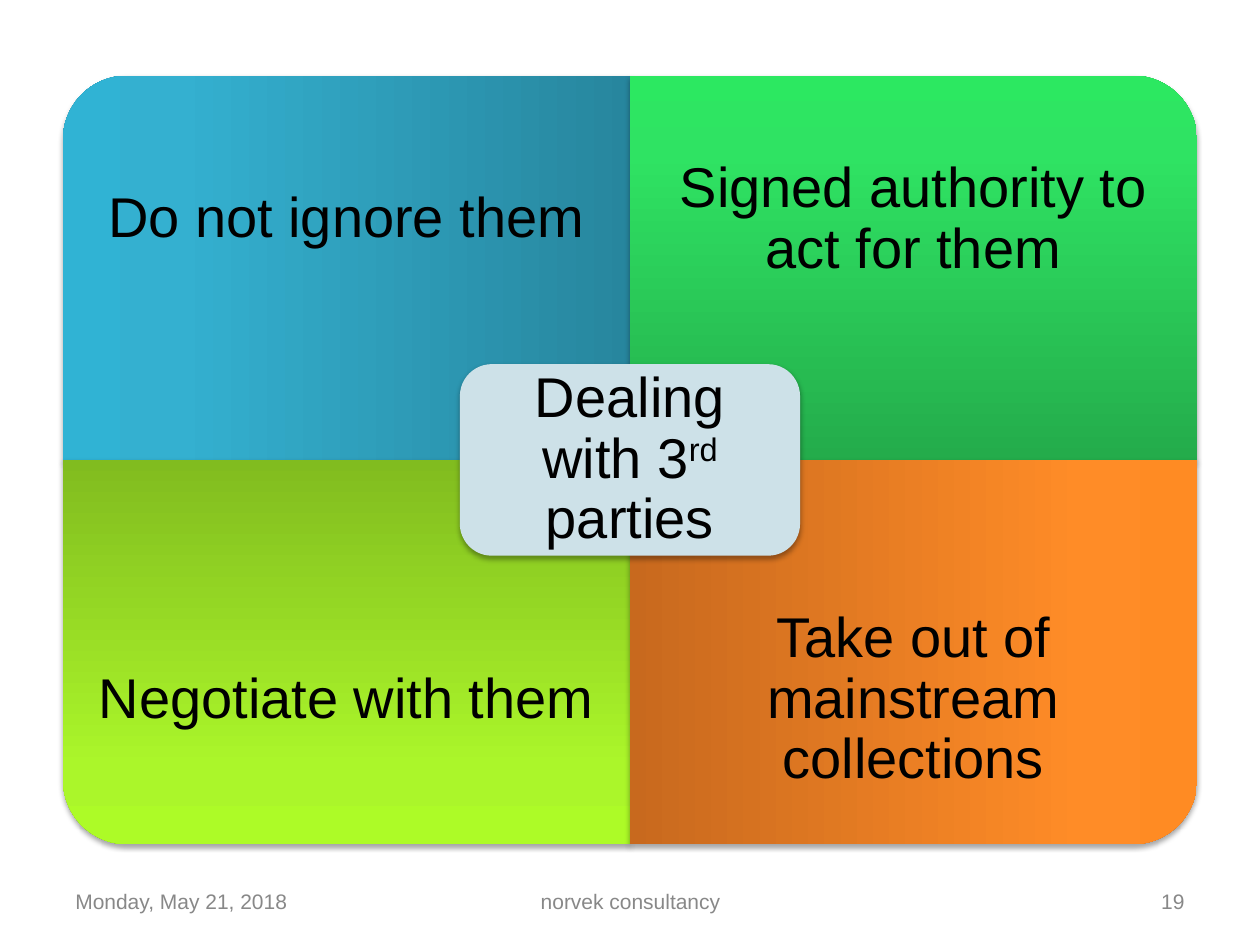
import pptx
import pptx.util
import pptx.dml.color
import pptx.enum.shapes
import pptx.enum.text
import pptx.oxml
import pptx.oxml.ns
from lxml import etree

Inches = pptx.util.Inches
Pt = pptx.util.Pt
qn = pptx.oxml.ns.qn
MSO_SHAPE = pptx.enum.shapes.MSO_SHAPE
ALIGN = pptx.enum.text.PP_ALIGN

COLOURS = {"text": "000000", "footer": "888888", "centre": "CDE1E8", "shadow": "000000"}
QUADRANTS = [
    ("Do not ignore them", 0, 0, 270, ("27869E", "34B0D0", "30B3D4")),
    ("Signed authority to act for them", 1, 0, 0, ("24AC4B", "2FE363", "2CE861")),
    ("Negotiate with them", 0, 1, 180, ("81BC1F", "ABF62A", "ADFB27")),
    ("Take out of mainstream collections", 1, 1, 90, ("C8691E", "FF8C27", "FF8B23")),
]
GRADIENT_STOPS = (0, 80, 100)
CENTRE_RUNS = [("Dealing with 3", False), ("rd", True), (" parties", False)]
FOOTERS = [
    ("Monday, May 21, 2018", 0.5, 2.33, ALIGN.LEFT),
    ("norvek consultancy", 3.42, 3.17, ALIGN.CENTER),
    ("19", 7.17, 2.33, ALIGN.RIGHT),
]
LEFT, TOP, CELL_WIDTH, CELL_HEIGHT = 0.5, 0.6, 4.5, 3.05
LABEL_HEIGHT = CELL_HEIGHT * 0.75
CENTRE_WIDTH, CENTRE_HEIGHT, CENTRE_PADDING = 2.7, 1.52, 0.07


def colour(name):
    return pptx.dml.color.RGBColor.from_string(COLOURS[name])


def add_colour(parent, value):
    return etree.SubElement(parent, qn("a:srgbClr"), val=value)


def add_text(shapes, box, runs, size, colour_name, align, margins, spacing=None):
    text_box = shapes.add_textbox(*map(Inches, box))
    frame = text_box.text_frame
    frame.word_wrap = True
    frame.vertical_anchor = pptx.enum.text.MSO_ANCHOR.MIDDLE
    frame.margin_left = frame.margin_right = Inches(margins[0])
    frame.margin_top = frame.margin_bottom = Inches(margins[1])
    paragraph = frame.paragraphs[0]
    paragraph.alignment = align
    paragraph.line_spacing = spacing
    paragraph.font.name = "Arial"
    paragraph.font.size = Pt(size)
    paragraph.font.color.rgb = colour(colour_name)
    for text, raised in runs:
        run = paragraph.add_run()
        run.text = text
        if raised:
            run._r.get_or_add_rPr().set("baseline", "30000")


def add_panel(shapes, preset, box):
    shape = shapes.add_shape(preset, *map(Inches, box))
    shape.line.fill.background()
    shape.shadow.inherit = False
    effects = shape._element.spPr.find(qn("a:effectLst"))
    shadow = etree.SubElement(
        effects, qn("a:outerShdw"), blurRad=str(Pt(3.1)), dist=str(Pt(1.8)),
        dir="5400000", rotWithShape="0")
    etree.SubElement(add_colour(shadow, COLOURS["shadow"]), qn("a:alpha"), val="35000")
    return shape


def fill_gradient(shape, values):
    shape.fill.gradient()
    shape.fill.gradient_angle = 90
    stops = shape._element.spPr.find(qn("a:gradFill")).find(qn("a:gsLst"))
    for stop in list(stops):
        stops.remove(stop)
    for position, value in zip(GRADIENT_STOPS, values):
        add_colour(etree.SubElement(stops, qn("a:gs"), pos=str(position * 1000)), value)


def add_quadrant(shapes, text, column, row, rotation, values):
    left = LEFT + column * CELL_WIDTH
    top = TOP + row * CELL_HEIGHT
    width, height = CELL_WIDTH, CELL_HEIGHT
    if rotation % 180:
        width, height = height, width
    box = (left + (CELL_WIDTH - width) / 2, top + (CELL_HEIGHT - height) / 2, width, height)
    shape = add_panel(shapes, MSO_SHAPE.ROUND_1_RECTANGLE, box)
    shape.rotation = rotation
    fill_gradient(shape, values)
    label_top = top + row * (CELL_HEIGHT - LABEL_HEIGHT)
    add_text(shapes, (left, label_top, CELL_WIDTH, LABEL_HEIGHT), [(text, False)],
             32, "text", ALIGN.CENTER, (0.25, 0.25), 0.9)


def add_centre(shapes):
    left = LEFT + CELL_WIDTH - CENTRE_WIDTH / 2
    top = TOP + CELL_HEIGHT - CENTRE_HEIGHT / 2
    shape = add_panel(shapes, MSO_SHAPE.ROUNDED_RECTANGLE,
                      (left, top, CENTRE_WIDTH, CENTRE_HEIGHT))
    shape.fill.solid()
    shape.fill.fore_color.rgb = colour("centre")
    box = (left + CENTRE_PADDING, top + CENTRE_PADDING,
           CENTRE_WIDTH - 2 * CENTRE_PADDING, CENTRE_HEIGHT - 2 * CENTRE_PADDING)
    add_text(shapes, box, CENTRE_RUNS, 32, "text", ALIGN.CENTER, (0.13, 0.13), 0.9)


def main():
    presentation = pptx.Presentation()
    presentation.slide_width = Inches(10)
    presentation.slide_height = Inches(7.5)
    slide = presentation.slides.add_slide(presentation.slide_layouts[6])
    for text, left, width, align in FOOTERS:
        add_text(slide.shapes, (left, 6.95, width, 0.4), [(text, False)],
                 12, "footer", align, (0.1, 0.05))
    matrix = slide.shapes.add_group_shape()
    for quadrant in QUADRANTS:
        add_quadrant(matrix.shapes, *quadrant)
    add_centre(matrix.shapes)
    presentation.save("out.pptx")


if __name__ == "__main__":
    main()
